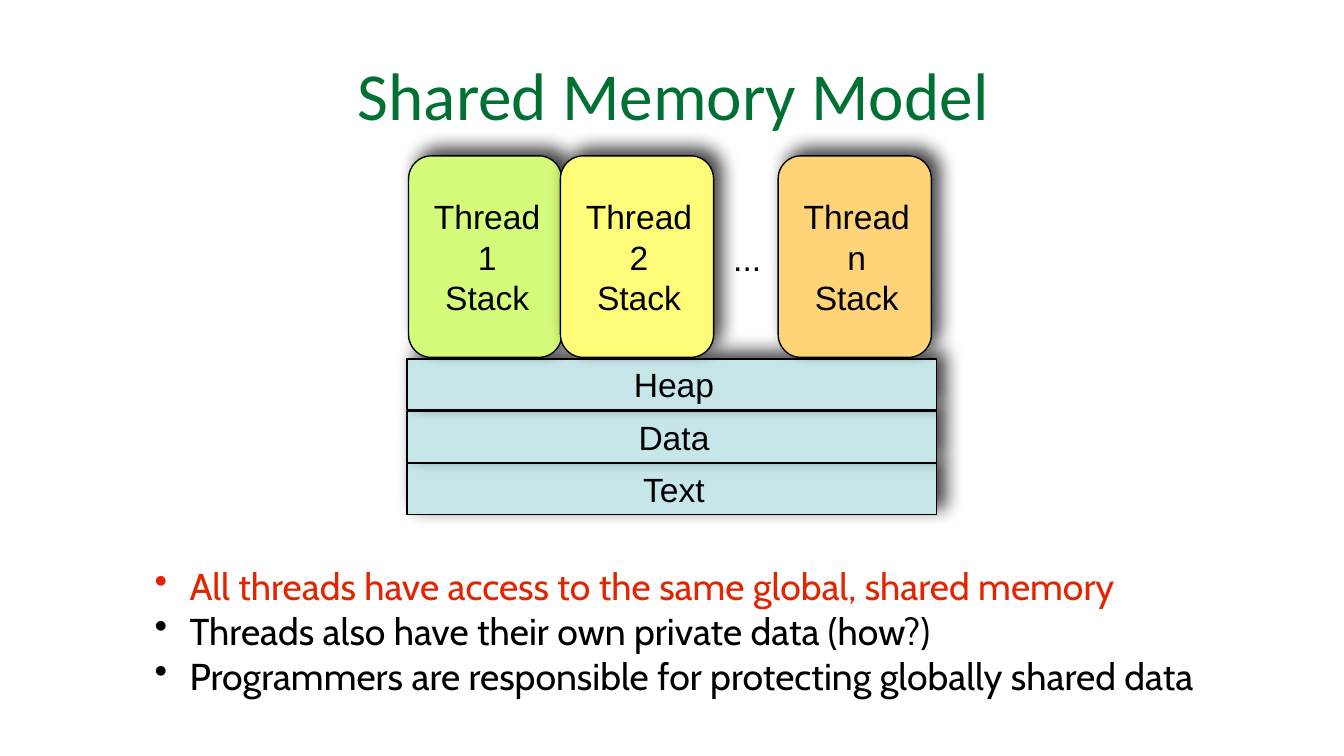
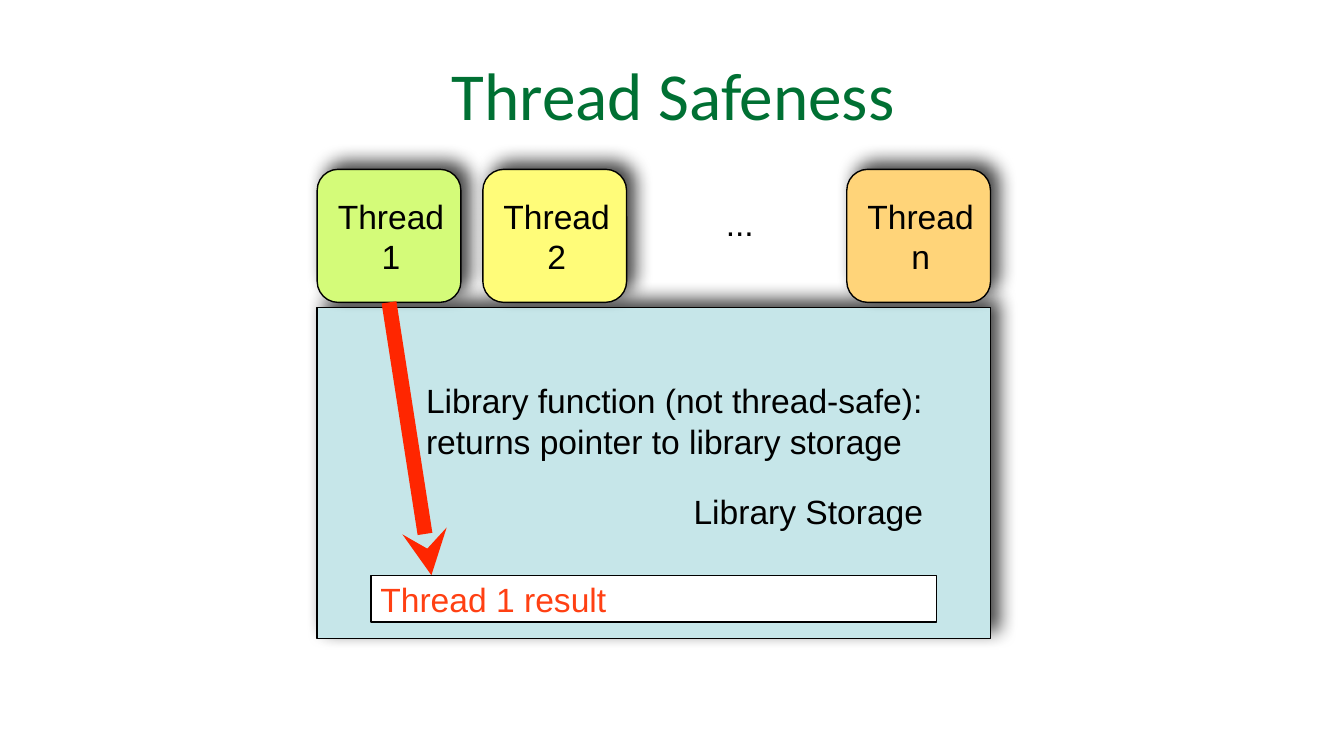
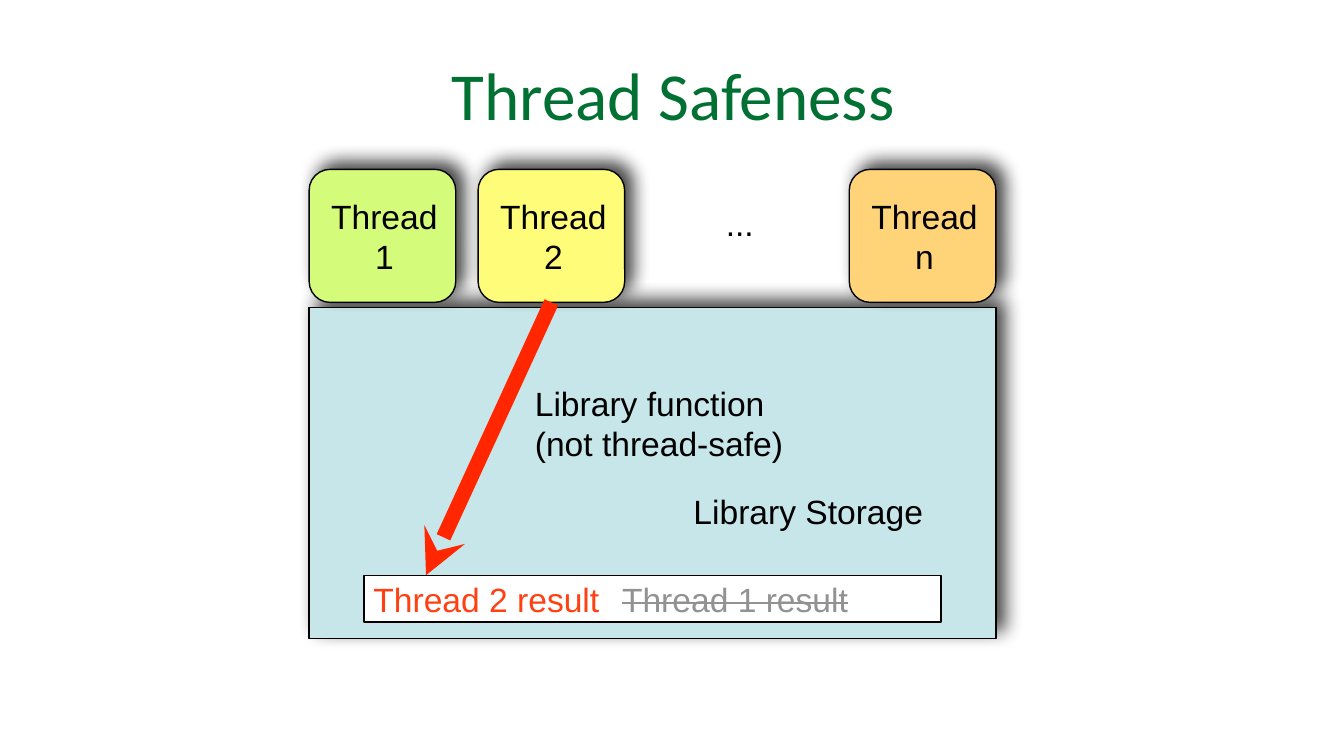
from lxml.etree import SubElement as Sub
from pptx import Presentation
from pptx.dml.color import RGBColor
from pptx.enum.shapes import MSO_CONNECTOR as Link, MSO_SHAPE as Form
from pptx.enum.text import MSO_ANCHOR as Anchor, PP_ALIGN as Align
from pptx.oxml.ns import qn
from pptx.util import Inches, Pt

COLS, ROWS = 100, 56.25
BLACK, WHITE, GREEN, RED = "000000", "FFFFFF", "007033", "E32400"
POOL, ARROW, FRESH, STALE = "C6E6E9", "FF2600", "FF4013", "929292"
THREADS = {"1": "D4FB79", "2": "FFFC79", "n": "FFD479"}


def rgb(code):
    return RGBColor.from_string(code)


def node(parent, tag, **attrs):
    return Sub(parent, qn(f"a:{tag}"), {k: str(v) for k, v in attrs.items()})


class Deck:
    """Holds the style and the current slide; lengths are grid columns and rows."""

    def __init__(self):
        self.prs = Presentation()
        self.prs.slide_width, self.prs.slide_height = Inches(10), Inches(5.625)
        self.col = self.prs.slide_width / COLS
        self.row = self.prs.slide_height / ROWS

    def page(self):
        self.slide = self.prs.slides.add_slide(self.prs.slide_layouts[6])
        self.shapes = self.slide.shapes

    def grid(self, x, y, w, h):
        return [round(n * u) for n, u in zip((x, y, w, h), (self.col, self.row) * 2)]

    def fill_in(self, shape, lines, align=Align.LEFT, anchor=Anchor.TOP,
                size=18, face="Arial", color=BLACK):
        frame = shape.text_frame
        frame.word_wrap, frame.vertical_anchor = True, anchor
        frame.margin_left = frame.margin_right = Inches(0.04)
        frame.margin_top = frame.margin_bottom = Inches(0.04)
        for i, line in enumerate(lines):
            para = frame.paragraphs[0] if i == 0 else frame.add_paragraph()
            para.text, para.alignment = line, align
            para._p.get_or_add_pPr().set("marL", str(Inches(0.03)))
            self.style(para.font, size, face, color)
        return frame

    def style(self, font, size, face, color):
        font.size, font.name = Pt(size), face
        font.color.rgb = rgb(color)

    def text(self, at, lines, **look):
        return self.fill_in(self.shapes.add_textbox(*self.grid(*at)), lines, **look)

    def title(self, words):
        self.text((16.2, 0.8, 67.5, 12.4), [words], align=Align.CENTER,
                  anchor=Anchor.MIDDLE, size=36, face="Calibri", color=GREEN)

    def box(self, at, lines=(), fill=POOL, bend=None, shade=True, align=Align.CENTER):
        """Outlined box; bend rounds its corners, shade casts a shadow."""
        form = Form.RECTANGLE if bend is None else Form.ROUNDED_RECTANGLE
        shape = self.shapes.add_shape(form, *self.grid(*at))
        if bend is not None:
            shape.adjustments[0] = bend
        shape.fill.solid()
        shape.fill.fore_color.rgb = rgb(fill)
        shape.line.color.rgb, shape.line.width = rgb(BLACK), Pt(0.75)
        shape.shadow.inherit = False
        if shade:
            glow = node(shape._element.spPr.find(qn("a:effectLst")), "outerShdw",
                        blurRad=Pt(10), dist=Pt(6), dir=315 * 60000,
                        algn="ctr", rotWithShape=0)
            node(node(glow, "srgbClr", val=BLACK), "alpha", val=75000)
        self.fill_in(shape, lines, align=align, anchor=Anchor.MIDDLE)
        return shape

    def arrow(self, start, x, y):
        """Arrow from the bottom of a box to a point."""
        x, y = self.grid(x, y, 0, 0)[:2]
        line = self.shapes.add_connector(Link.STRAIGHT, 0, 0, x, y)
        line.begin_connect(start, 2)
        line.line.color.rgb, line.line.width = rgb(ARROW), Pt(8)
        props = line._element.spPr
        node(props.find(qn("a:ln")), "tailEnd", type="stealth")
        node(props, "effectLst")

    def bullets(self, at, items):
        frame = self.text(at, [])
        for i, (words, color) in enumerate(items):
            para = frame.paragraphs[0] if i == 0 else frame.add_paragraph()
            para.text = words
            props = para._p.get_or_add_pPr()
            props.set("marL", str(Inches(0.38)))
            props.set("indent", str(Inches(-0.26)))
            node(node(props, "buClr"), "srgbClr", val=color)
            node(props, "buChar", char="•")
            self.style(para.font, 20, "Cabin", color)


def memory(deck):
    deck.page()
    deck.title("Shared Memory Model")
    for i, name in enumerate(["Text", "Data", "Heap"]):
        deck.box((30.3, 34.5 - 3.9 * i, 39.4, 3.8), [name])
    for x, (name, fill) in zip((30.4, 41.7, 57.9), THREADS.items()):
        deck.box((x, 11.6, 11.4, 15), ["Thread", name, "Stack"], fill, 0.15)
    deck.text((53.6, 17.3, 3.7, 3.6), ["..."], align=Align.CENTER)
    deck.bullets((9.9, 41.5, 80.2, 11.2), [
        ("All threads have access to the same global, shared memory", RED),
        ("Threads also have their own private data (how?)", BLACK),
        ("Programmers are responsible for protecting globally shared data", BLACK)])


def safety(deck, left, wide, caller, tip, note, lines, old=None):
    """Library slide: the calling thread points at the result it has stored."""
    deck.page()
    deck.box((left, 22.9, wide, 24.6))
    deck.title("Thread Safeness")
    side, step, inset = 0.2135 * wide, 0.246 * wide, 0.08 * wide
    spots = (left, left + step, left + wide - side)
    boxes = {name: deck.box((x, 12.6, side, 9.9), ["Thread", name], fill, 0.158)
             for x, (name, fill) in zip(spots, THREADS.items())}
    deck.text((52.3, 14.7, 5.2, 3.7), ["..."], align=Align.CENTER)

    store = deck.box((left + inset, 42.8, wide - 2 * inset, 3.5),
                     [f"Thread {caller} result"], WHITE, shade=False, align=Align.LEFT)
    para = store.text_frame.paragraphs[0]
    if old:
        para.clear()
        props = para._p.get_or_add_pPr()
        for child in list(props):
            props.remove(child)
        node(node(props, "tabLst"), "tab", pos=Inches(1.85), algn="l")
        for words, color in ((f"Thread {caller} result\t", FRESH),
                             (f"Thread {old} result", STALE)):
            run = para.add_run()
            run.text = words
            deck.style(run.font, 18, "Arial", color)
        run.font._element.set("strike", "sngStrike")
    else:
        para.font.color.rgb = rgb(FRESH)

    deck.text((50.9, 36.1, left + wide - inset - 50.9, 3.7), ["Library Storage"])
    deck.arrow(boxes[caller], tip, 42.8)
    deck.text(note, lines)


def main():
    deck = Deck()
    memory(deck)
    safety(deck, 23.6, 50.1, "1", 32.1, (31, 27.9, 41.3, 6.6),
           ["Library function (not thread-safe):", "returns pointer to library storage"])
    safety(deck, 23, 51.1, "2", 31.7, (39.1, 28.1, 24.6, 6.6),
           ["Library function", "(not thread-safe)"], old="1")
    deck.prs.save("out.pptx")


if __name__ == "__main__":
    main()
